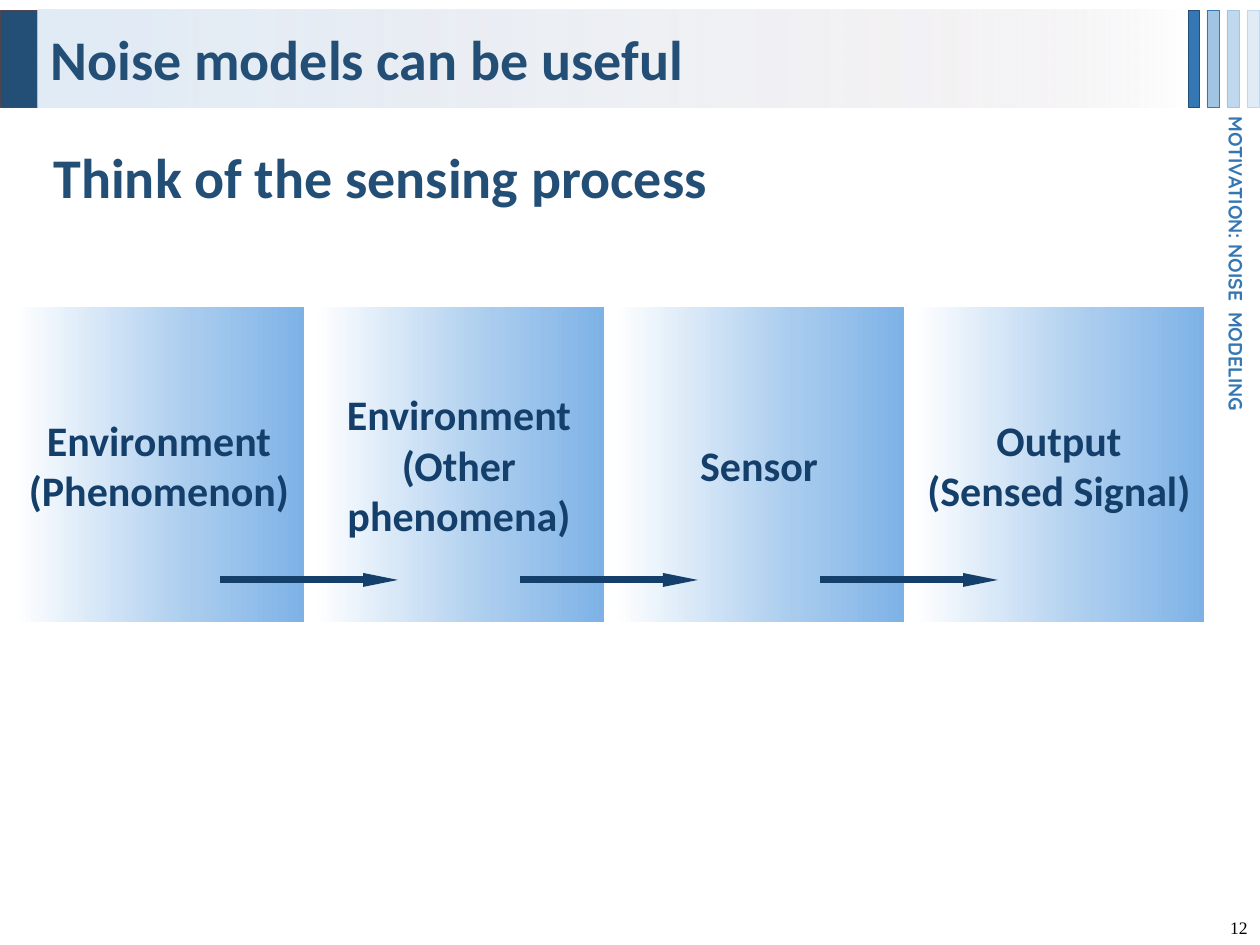
from lxml.etree import SubElement
from pptx import Presentation
from pptx.dml.color import RGBColor
from pptx.enum.shapes import MSO_CONNECTOR, MSO_SHAPE
from pptx.enum.text import MSO_ANCHOR, PP_ALIGN
from pptx.oxml.ns import qn
from pptx.util import Emu, Pt

PX = 914400 // 126
NAVY, DARK, BLUE = "234F77", "143F6A", "3477B2"

TITLE = "Noise models can be useful"
HEADING = "Think of the sensing process"
SECTION = "MOTIVATION: NOISE  MODELING"
PAGE = "12"
STAGES = [
    ["Environment", "(Phenomenon)"],
    ["Environment", "(Other phenomena)"],
    ["Sensor"],
    ["Output", "(Sensed Signal)"],
]
BAR_TOP, BAR_HEIGHT = 10, 97
# left, width, fill, line
BARS = [
    (0, 38, NAVY, "504652"),
    (1188, 11, BLUE, NAVY),
    (1207, 12, "A1C4E3", BLUE),
    (1227, 12, "C0D8ED", "A1C4E3"),
    (1247, 12, "E0EBF6", "C0D8ED"),
]
# position %, colour, opacity %
TITLE_STOPS = [(0, "E0EBF6", 100), (83, "EBE9EC", 53), (100, "FFFFFF", 100)]
STAGE_STOPS = [(0, "FFFFFF", 100), (62, "A9CCEE", 100), (100, "7EB2E6", 100)]
STAGE_LEFT, STAGE_TOP, STAGE_PITCH = 14, 307, 300
STAGE_WIDTH, STAGE_HEIGHT = 290, 315
# Arrows lie below the stage text, centred on the gaps between stages
ARROW_Y, ARROW_LENGTH = 580, 178


def px(*values):
    return [Emu(v * PX) for v in values]


def rgb(color):
    return RGBColor.from_string(color)


def add_rect(slide, *box):
    sp = slide.shapes.add_shape(MSO_SHAPE.RECTANGLE, *px(*box))
    sp.shadow.inherit = False
    sp.line.fill.background()
    return sp


def fill_gradient(sp, stops):
    """Fill left to right with any number of stops."""
    sp.fill.gradient()
    sp.fill.gradient_angle = 0
    gs_list = sp.element.spPr.find(".//" + qn("a:gsLst"))
    for gs in list(gs_list):
        gs_list.remove(gs)
    for position, color, opacity in stops:
        gs = SubElement(gs_list, qn("a:gs"), pos=str(position * 1000))
        clr = SubElement(gs, qn("a:srgbClr"), val=color)
        if opacity < 100:
            SubElement(clr, qn("a:alpha"), val=str(opacity * 1000))


def write(sp, lines, size, color, font="Calibri", bold=True,
          align=PP_ALIGN.LEFT, anchor=MSO_ANCHOR.TOP):
    tf = sp.text_frame
    tf.word_wrap = True
    tf.vertical_anchor = anchor
    tf.text = "\n".join(lines)
    for p in tf.paragraphs:
        p.alignment = align
        p.font.size = Pt(size)
        p.font.name = font
        p.font.bold = bold
        p.font.color.rgb = rgb(color)


def add_text(slide, box, text, *args, **kwargs):
    sp = slide.shapes.add_textbox(*px(*box))
    write(sp, [text], *args, **kwargs)
    return sp


def add_arrow(slide, left):
    line = slide.shapes.add_connector(
        MSO_CONNECTOR.STRAIGHT, *px(left, ARROW_Y, left + ARROW_LENGTH, ARROW_Y))
    line.line.width = Pt(4)
    line.line.color.rgb = rgb(DARK)
    SubElement(line.line._get_or_add_ln(), qn("a:tailEnd"),
               type="triangle", w="sm", len="lg")
    SubElement(line.element.spPr, qn("a:effectLst"))


def main():
    prs = Presentation()
    prs.slide_width, prs.slide_height = px(1260, 945)
    s = prs.slides.add_slide(prs.slide_layouts[6])

    for left, width, fill, line in BARS:
        bar = add_rect(s, left, BAR_TOP, width, BAR_HEIGHT)
        bar.fill.solid()
        bar.fill.fore_color.rgb = rgb(fill)
        bar.line.color.rgb = rgb(line)
        bar.line.width = Pt(0.25)

    title = add_rect(s, 38, BAR_TOP, 1150, BAR_HEIGHT)
    fill_gradient(title, TITLE_STOPS)
    write(title, [TITLE], 32, NAVY, anchor=MSO_ANCHOR.MIDDLE)

    heading = add_text(s, (31, 136, 1169, 746), HEADING, 32, NAVY)
    pPr = heading.text_frame.paragraphs[0]._p.get_or_add_pPr()
    margin, indent = px(48, -38)
    pPr.set("marL", str(margin))
    pPr.set("indent", str(indent))

    section = add_text(s, (1065, 256, 341, 37), SECTION, 11, BLUE, "Quicksand")
    section.rotation = 90
    add_text(s, (1213, 911, 47, 34), PAGE, 10, "000000", "Times New Roman",
             bold=False, align=PP_ALIGN.RIGHT)

    for i, lines in enumerate(STAGES):
        stage = add_rect(s, STAGE_LEFT + i * STAGE_PITCH, STAGE_TOP,
                         STAGE_WIDTH, STAGE_HEIGHT)
        fill_gradient(stage, STAGE_STOPS)
        write(stage, lines, 24, DARK, align=PP_ALIGN.CENTER,
              anchor=MSO_ANCHOR.MIDDLE)

    gap = STAGE_PITCH - STAGE_WIDTH
    for i in range(1, len(STAGES)):
        gap_center = STAGE_LEFT + i * STAGE_PITCH - gap // 2
        add_arrow(s, gap_center - ARROW_LENGTH // 2)

    prs.save("out.pptx")


if __name__ == "__main__":
    main()
